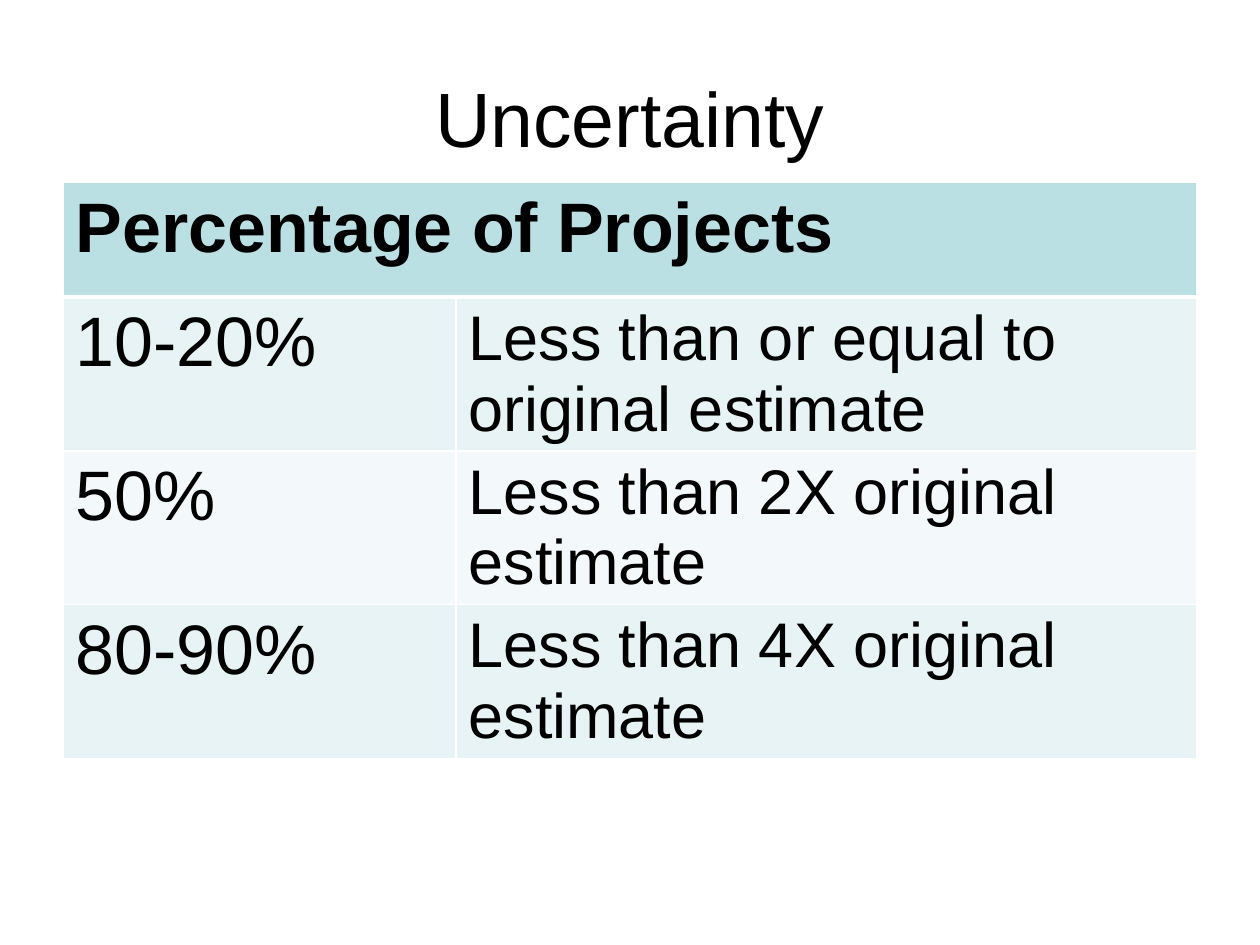
from lxml import etree
from pptx import Presentation
from pptx import util as u
from pptx.dml.color import RGBColor
from pptx.enum import text as t
from pptx.oxml import ns

ROWS = [
    ("Percentage of Projects", ""),
    ("10-20%", "Less than or equal to original estimate"),
    ("50%", "Less than 2X original estimate"),
    ("80-90%", "Less than 4X original estimate"),
]
HEAD, ODD, EVEN = "BBE0E3", "E7F3F4", "F3F9FA"


def tint(part, code):
    part.rgb = RGBColor.from_string(code)


def write(frame, words, **form):
    frame.text = words
    font = frame.paragraphs[0].runs[0].font
    for key, val in {"name": "Arial", "bold": False, **form}.items():
        setattr(font, key, val)
    tint(font.color, "000000")


def edge(cell, side, width):
    props = cell._tc.get_or_add_tcPr()
    line = etree.SubElement(props, ns.qn("a:ln" + side), w=str(u.Pt(width)))
    fill = etree.SubElement(line, ns.qn("a:solidFill"))
    etree.SubElement(fill, ns.qn("a:srgbClr"), val="FFFFFF")


def paint(cell, row):
    for side in "LRTB":
        thick = (row, side) in ((0, "B"), (1, "T"))
        edge(cell, side, 3 if thick else 1)
    cell.fill.solid()
    tint(cell.fill.fore_color, HEAD if row == 0 else ODD if row % 2 else EVEN)


def add_title(slide, words, left, top, width, height):
    title = slide.shapes.title
    box = {"left": left, "top": top, "width": width, "height": height}
    for key, val in box.items():
        setattr(title, key, val)
    write(title.text_frame, words, size=u.Pt(44))
    title.text_frame.vertical_anchor = t.MSO_ANCHOR.MIDDLE
    title.text_frame.paragraphs[0].alignment = t.PP_ALIGN.CENTER


def add_grid(slide, rows, left, top, width, height):
    grid = slide.shapes.add_table(len(rows), 2, left, top, width, height).table
    first = u.Cm(7.92)
    grid.columns[0].width = first
    grid.columns[1].width = width - first
    for r, pair in enumerate(rows):
        for c, words in enumerate(pair):
            cell = grid.cell(r, c)
            paint(cell, r)
            if words:
                write(cell.text_frame, words, size=u.Pt(36 if c else 40), bold=r == 0)
    grid.cell(0, 0).merge(grid.cell(0, 1))


def main():
    deck = Presentation()
    deck.slide_width, deck.slide_height = u.Cm(25.4), u.Cm(19.05)
    slide = deck.slides.add_slide(deck.slide_layouts[5])
    left, width = u.Cm(1.27), u.Cm(22.86)
    add_title(slide, "Uncertainty", left, u.Cm(0.76), width, u.Cm(3.18))
    add_grid(slide, ROWS, left, u.Cm(3.68), width, u.Cm(9.24))
    deck.save("out.pptx")


if __name__ == "__main__":
    main()
